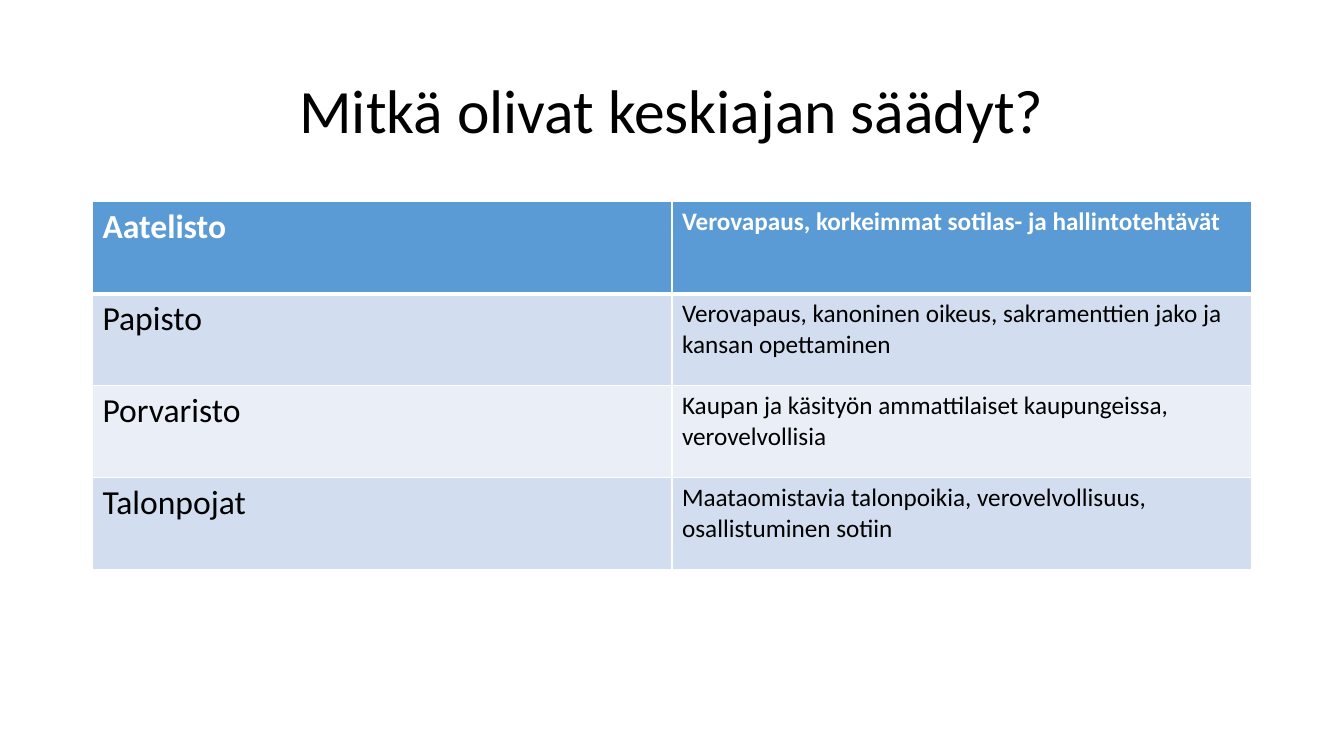
"""Build a slide with a table of the medieval estates."""
from pptx import Presentation
from pptx.dml.color import RGBColor
from pptx.enum.text import MSO_ANCHOR as Anchor, PP_ALIGN as Align
from pptx.oxml import parse_xml
from pptx.oxml.ns import nsdecls
from pptx.util import Cm, Pt


def add_run(paragraph, text, size, color, bold=False):
    run = paragraph.add_run()
    run.text = text
    run.font.name = "Calibri"
    run.font.size = Pt(size)
    run.font.bold = bold
    run.font.color.rgb = RGBColor.from_string(color)


def add_border(cell, side, width):
    cell._tc.get_or_add_tcPr().append(parse_xml(
        f'<a:ln{side} {nsdecls("a")} w="{Pt(width)}"><a:solidFill>'
        f'<a:srgbClr val="FFFFFF"/></a:solidFill></a:ln{side}>'))


ESTATES = [
    ("Aatelisto", ["Verovapaus, korkeimmat sotilas- ja hallintotehtävät"]),
    ("Papisto", ["Verovapaus, kanoninen oikeus, sakramenttien jako ja",
                 "kansan opettaminen"]),
    ("Porvaristo", ["Kaupan ja käsityön ammattilaiset kaupungeissa,",
                    "verovelvollisia"]),
    ("Talonpojat", ["Maataomistavia talonpoikia, verovelvollisuus,",
                    "osallistuminen sotiin"]),
]
ROW_FILLS = ["5B9BD5", "D2DEEF", "EAEFF7", "D2DEEF"]
LEFT, WIDTH, ROW_HEIGHT = Cm(2.33), Cm(29.21), Cm(2.32)

presentation = Presentation()
presentation.slide_width, presentation.slide_height = Cm(33.87), Cm(19.05)
slide = presentation.slides.add_slide(presentation.slide_layouts[5])

title = slide.shapes.title
title.left, title.top, title.width, title.height = LEFT, Cm(1.01), WIDTH, Cm(3.68)
title.text_frame.vertical_anchor = Anchor.MIDDLE
title.text_frame.word_wrap = True
paragraph = title.text_frame.paragraphs[0]
paragraph.alignment = Align.CENTER
paragraph.line_spacing = 0.9
add_run(paragraph, "Mitkä olivat keskiajan säädyt?", 44, "000000")

table = slide.shapes.add_table(len(ESTATES), 2, LEFT, Cm(5.08), WIDTH,
                               ROW_HEIGHT * len(ESTATES)).table
for row, (estate, description) in enumerate(ESTATES):
    table.rows[row].height = ROW_HEIGHT
    header = row == 0
    for column, (lines, size) in enumerate([([estate], 24), (description, 18)]):
        cell = table.cell(row, column)
        for side, width in [("L", 1), ("R", 1), ("T", 3 if row == 1 else 1),
                            ("B", 3 if header else 1)]:
            add_border(cell, side, width)
        cell.fill.solid()
        cell.fill.fore_color.rgb = RGBColor.from_string(ROW_FILLS[row])
        for index, line in enumerate(lines):
            frame = cell.text_frame
            paragraph = frame.add_paragraph() if index else frame.paragraphs[0]
            add_run(paragraph, line, size, "FFFFFF" if header else "000000", header)

presentation.save("out.pptx")
